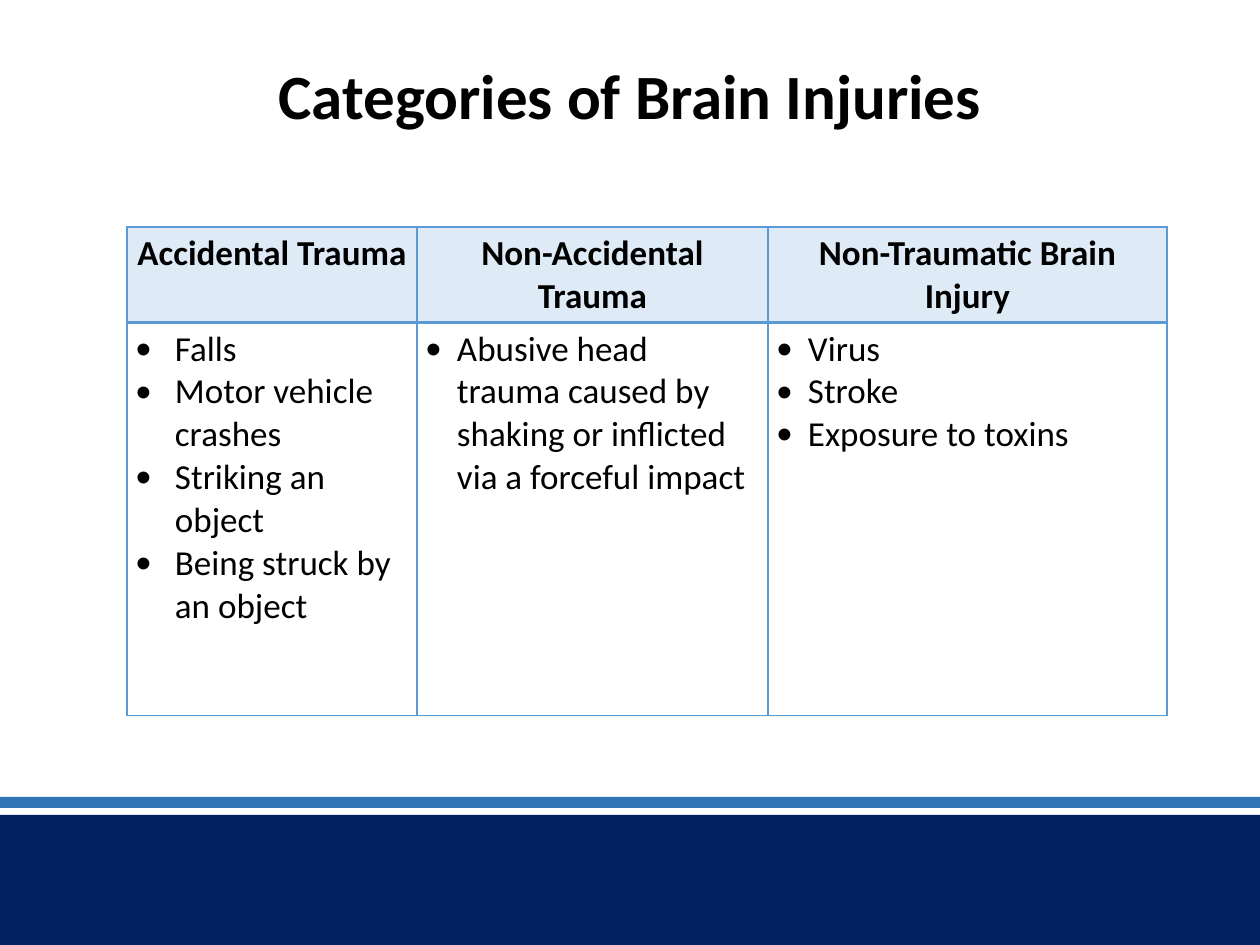
from lxml import etree
from pptx import Presentation
from pptx import util as u
from pptx.dml.color import RGBColor
from pptx.enum import shapes, text
from pptx.oxml import ns

BLACK = RGBColor(0x00, 0x00, 0x00)
NAVY = RGBColor(0x00, 0x20, 0x60)
BLUE = RGBColor(0x2E, 0x75, 0xB6)
SKY = RGBColor(0x5B, 0x9B, 0xD5)
PALE = RGBColor(0xDE, 0xEB, 0xF7)

WIDTH, HEIGHT = 1260, 945
PX_PER_INCH = 126

CATEGORIES = [
    ("Accidental Trauma", 290, 39, 0,
     ["Falls", "Motor vehicle crashes", "Striking an object", "Being struck by an object"]),
    ("Non-Accidental Trauma", 351, 31, 12,
     ["Abusive head trauma caused by shaking or inflicted via a forceful impact"]),
    ("Non-Traumatic Brain Injury", 399, 31, 0,
     ["Virus", "Stroke", "Exposure to toxins"]),
]


def px(length):
    return u.Emu(round(length * u.Inches(1) / PX_PER_INCH))


def add_xml(parent, tag, **attributes):
    return etree.SubElement(parent, ns.qn(tag), attributes)


def assign(target, values):
    for name, value in values.items():
        setattr(target, name, value)


class SlideBuilder:
    font_name = "Calibri"
    margins = {"margin_left": px(9), "margin_right": px(9),
               "margin_top": px(5), "margin_bottom": px(5)}

    def __init__(self, deck):
        self.slide = deck.slides.add_slide(deck.slide_layouts[5])

    def add_words(self, paragraph, words, size, bold):
        run = paragraph.add_run()
        run.text = words
        assign(run.font, {"name": self.font_name, "size": u.Pt(size), "bold": bold})
        run.font.color.rgb = BLACK

    def band(self, top, height, color):
        band = self.slide.shapes.add_shape(
            shapes.MSO_SHAPE.RECTANGLE, 0, px(top), px(WIDTH), px(height))
        band.shadow.inherit = False
        band.fill.solid()
        band.fill.fore_color.rgb = color
        band.line.fill.background()

    def title(self, words, left, top, width, height):
        heading = self.slide.shapes.title
        assign(heading, {"left": px(left), "top": px(top),
                         "width": px(width), "height": px(height)})
        assign(heading.text_frame, {"word_wrap": True,
                                    "auto_size": text.MSO_AUTO_SIZE.NONE,
                                    "vertical_anchor": text.MSO_ANCHOR.MIDDLE})
        paragraph = heading.text_frame.paragraphs[0]
        assign(paragraph, {"alignment": text.PP_ALIGN.CENTER, "line_spacing": 0.9})
        self.add_words(paragraph, words, 36, True)

    def borders(self, cell, widths):
        properties = cell._tc.get_or_add_tcPr()
        for side, width in widths.items():
            line = add_xml(properties, f"a:ln{side}", w=str(u.Pt(width)))
            fill = add_xml(line, "a:solidFill")
            add_xml(fill, "a:srgbClr", val=str(SKY))

    def header_cell(self, cell, words):
        assign(cell, self.margins)
        self.borders(cell, {"L": 1, "R": 1, "T": 1, "B": 2})
        cell.fill.solid()
        cell.fill.fore_color.rgb = PALE
        paragraph = cell.text_frame.paragraphs[0]
        paragraph.alignment = text.PP_ALIGN.CENTER
        self.add_words(paragraph, words, 20, True)

    def list_cell(self, cell, examples, indent, space_after):
        assign(cell, self.margins)
        self.borders(cell, {"L": 1, "R": 1, "T": 2, "B": 1})
        cell.fill.background()
        frame = cell.text_frame
        for index, example in enumerate(examples):
            paragraph = frame.add_paragraph() if index else frame.paragraphs[0]
            properties = paragraph._p.get_or_add_pPr()
            properties.set("marL", str(px(indent)))
            properties.set("indent", str(-px(indent)))
            add_xml(properties, "a:buSzPct", val="125000")
            add_xml(properties, "a:buFont", typeface="Arial")
            add_xml(properties, "a:buChar", char="•")
            paragraph.space_after = u.Pt(space_after)
            self.add_words(paragraph, example, 20, False)

    def table(self, categories, left, top, row_heights):
        width = sum(category[1] for category in categories)
        grid = self.slide.shapes.add_table(
            len(row_heights), len(categories), px(left), px(top),
            px(width), px(sum(row_heights))).table
        grid.horz_banding = False
        for row, height in zip(grid.rows, row_heights):
            row.height = px(height)
        for column, category in enumerate(categories):
            name, column_width, indent, space_after, examples = category
            grid.columns[column].width = px(column_width)
            self.header_cell(grid.cell(0, column), name)
            self.list_cell(grid.cell(1, column), examples, indent, space_after)


def main():
    deck = Presentation()
    assign(deck, {"slide_width": px(WIDTH), "slide_height": px(HEIGHT)})
    builder = SlideBuilder(deck)
    builder.band(815, 130, NAVY)
    builder.band(797, 11, BLUE)
    builder.title("Categories of Brain Injuries", 63, 63, 1134, 72)
    builder.table(CATEGORIES, 127, 227, [95, 393])
    deck.save("out.pptx")


if __name__ == "__main__":
    main()
